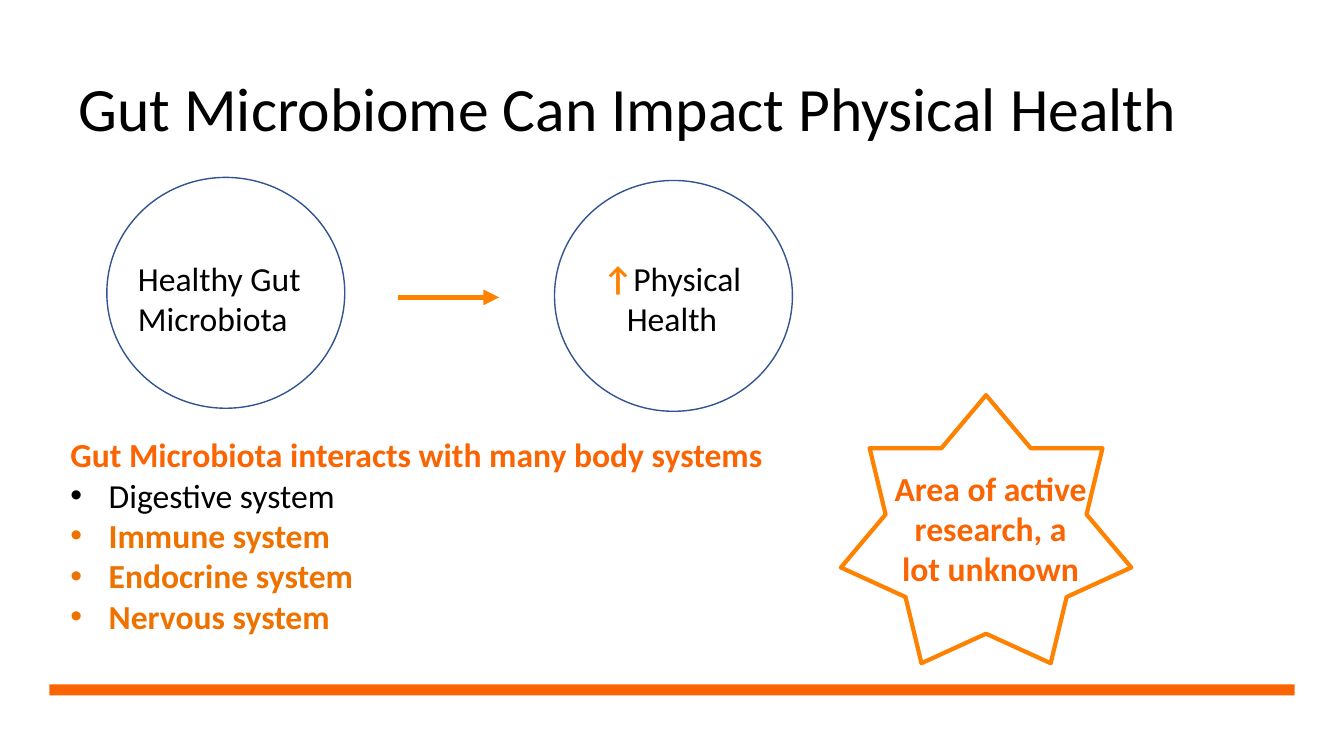
"""Build the slide on how the gut microbiome can affect physical health."""
from dataclasses import dataclass

from lxml.etree import SubElement
from pptx import Presentation
from pptx.dml.color import RGBColor
from pptx.enum.shapes import MSO_CONNECTOR, MSO_SHAPE
from pptx.enum.text import MSO_ANCHOR, MSO_AUTO_SIZE, PP_ALIGN
from pptx.oxml.ns import qn
from pptx.util import Inches, Pt

BLACK = RGBColor(0x00, 0x00, 0x00)
DEEP_ORANGE = RGBColor(0xFA, 0x64, 0x02)
BRIGHT_ORANGE = RGBColor(0xFF, 0x81, 0x00)
AMBER = RGBColor(0xEE, 0x72, 0x00)
BLUE = RGBColor(0x32, 0x54, 0x91)
BULLET_INDENT = Inches(0.38)


@dataclass(frozen=True)
class Box:
    left: float
    top: float
    width: float
    height: float

    def lengths(self) -> tuple:
        return tuple(map(Inches, (self.left, self.top, self.width, self.height)))


@dataclass(frozen=True)
class Phrase:
    text: str
    color: RGBColor = BLACK
    bold: bool = False
    size: int = 24


@dataclass(frozen=True)
class Line:
    phrases: tuple[Phrase, ...]
    align: PP_ALIGN = PP_ALIGN.LEFT
    bulleted: bool = False


@dataclass(frozen=True)
class Outline:
    kind: MSO_SHAPE
    box: Box
    color: RGBColor
    weight: float


@dataclass(frozen=True)
class Caption:
    box: Box
    lines: tuple[Line, ...]


TITLE = Line((Phrase("Gut Microbiome Can Impact Physical Health", size=44),))
TITLE_BOX = Box(0.68, 0.38, 12.13, 1.45)
FOOTER_BAR = Box(0.49, 6.79, 12.35, 0.11)

OUTLINES = (
    Outline(MSO_SHAPE.STAR_7_POINT, Box(8.34, 3.92, 2.88, 2.66), BRIGHT_ORANGE, 3),
    Outline(MSO_SHAPE.OVAL, Box(5.5, 1.79, 2.36, 2.29), BLUE, 1),
    Outline(MSO_SHAPE.OVAL, Box(1.06, 1.76, 2.36, 2.29), BLUE, 1),
)

BODY_SYSTEMS = (
    Phrase("Digestive system"),
    Phrase("Immune system", AMBER, True),
    Phrase("Endocrine system", AMBER, True),
    Phrase("Nervous system", AMBER, True),
)

CAPTIONS = (
    Caption(Box(8.75, 4.59, 2.15, 1.31), (
        Line((Phrase("Area of active research, a lot unknown", DEEP_ORANGE, True),),
             PP_ALIGN.CENTER),
    )),
    Caption(Box(0.6, 4.26, 7.54, 2.12), (
        Line((Phrase("Gut Microbiota interacts with many body systems",
                     DEEP_ORANGE, True),)),
        *(Line((system,), bulleted=True) for system in BODY_SYSTEMS),
    )),
    Caption(Box(5.77, 2.51, 1.79, 0.91), (
        Line((Phrase("↑", BRIGHT_ORANGE, True), Phrase("Physical Health")),
             PP_ALIGN.CENTER),
    )),
    Caption(Box(1.27, 2.51, 2.15, 0.91), (
        Line((Phrase("Healthy Gut Microbiota"),)),
    )),
)


def apply_format(target, values: dict) -> None:
    for name, value in values.items():
        setattr(target, name, value)


def write_line(paragraph, line: Line) -> None:
    paragraph.alignment = line.align
    if line.bulleted:
        properties = paragraph._p.get_or_add_pPr()
        properties.set("marL", str(BULLET_INDENT))
        properties.set("indent", str(-BULLET_INDENT))
        SubElement(properties, qn("a:buFont")).set("typeface", "Arial")
        SubElement(properties, qn("a:buChar")).set("char", "•")
    for phrase in line.phrases:
        run = paragraph.add_run()
        run.text = phrase.text
        apply_format(run.font, {"name": "Calibri", "size": Pt(phrase.size),
                                "bold": phrase.bold})
        run.font.color.rgb = phrase.color


def add_title(slide) -> None:
    title = slide.shapes.title
    left, top, width, height = TITLE_BOX.lengths()
    apply_format(title, {"left": left, "top": top, "width": width, "height": height})
    apply_format(title.text_frame, {"vertical_anchor": MSO_ANCHOR.MIDDLE,
                                    "word_wrap": True,
                                    "auto_size": MSO_AUTO_SIZE.NONE})
    heading = title.text_frame.paragraphs[0]
    heading.line_spacing = 0.9
    write_line(heading, TITLE)


def add_footer_bar(slide) -> None:
    bar = slide.shapes.add_shape(MSO_SHAPE.RECTANGLE, *FOOTER_BAR.lengths())
    bar.shadow.inherit = False
    bar.fill.solid()
    bar.fill.fore_color.rgb = DEEP_ORANGE
    bar.line.fill.background()


def add_outline(slide, outline: Outline) -> None:
    figure = slide.shapes.add_shape(outline.kind, *outline.box.lengths())
    figure.shadow.inherit = False
    figure.fill.background()
    figure.line.color.rgb = outline.color
    figure.line.width = Pt(outline.weight)


def add_caption(slide, caption: Caption) -> None:
    frame = slide.shapes.add_textbox(*caption.box.lengths()).text_frame
    apply_format(frame, {"word_wrap": True,
                         "auto_size": MSO_AUTO_SIZE.SHAPE_TO_FIT_TEXT})
    for index, line in enumerate(caption.lines):
        paragraph = frame.add_paragraph() if index else frame.paragraphs[0]
        write_line(paragraph, line)


def add_effect_arrow(slide) -> None:
    arrow = slide.shapes.add_connector(
        MSO_CONNECTOR.STRAIGHT, *map(Inches, (3.95, 2.95, 4.95, 2.95)))
    arrow.line.color.rgb = BRIGHT_ORANGE
    arrow.line.width = Pt(3.75)
    SubElement(arrow.line._get_or_add_ln(), qn("a:tailEnd")).set("type", "triangle")
    SubElement(arrow._element.spPr, qn("a:effectLst"))


def main() -> None:
    presentation = Presentation()
    apply_format(presentation, {"slide_width": Inches(13.33),
                                "slide_height": Inches(7.5)})
    slide = presentation.slides.add_slide(presentation.slide_layouts[5])
    add_title(slide)
    add_footer_bar(slide)
    for outline in OUTLINES:
        add_outline(slide, outline)
    for caption in CAPTIONS:
        add_caption(slide, caption)
    add_effect_arrow(slide)
    presentation.save("out.pptx")


if __name__ == "__main__":
    main()
